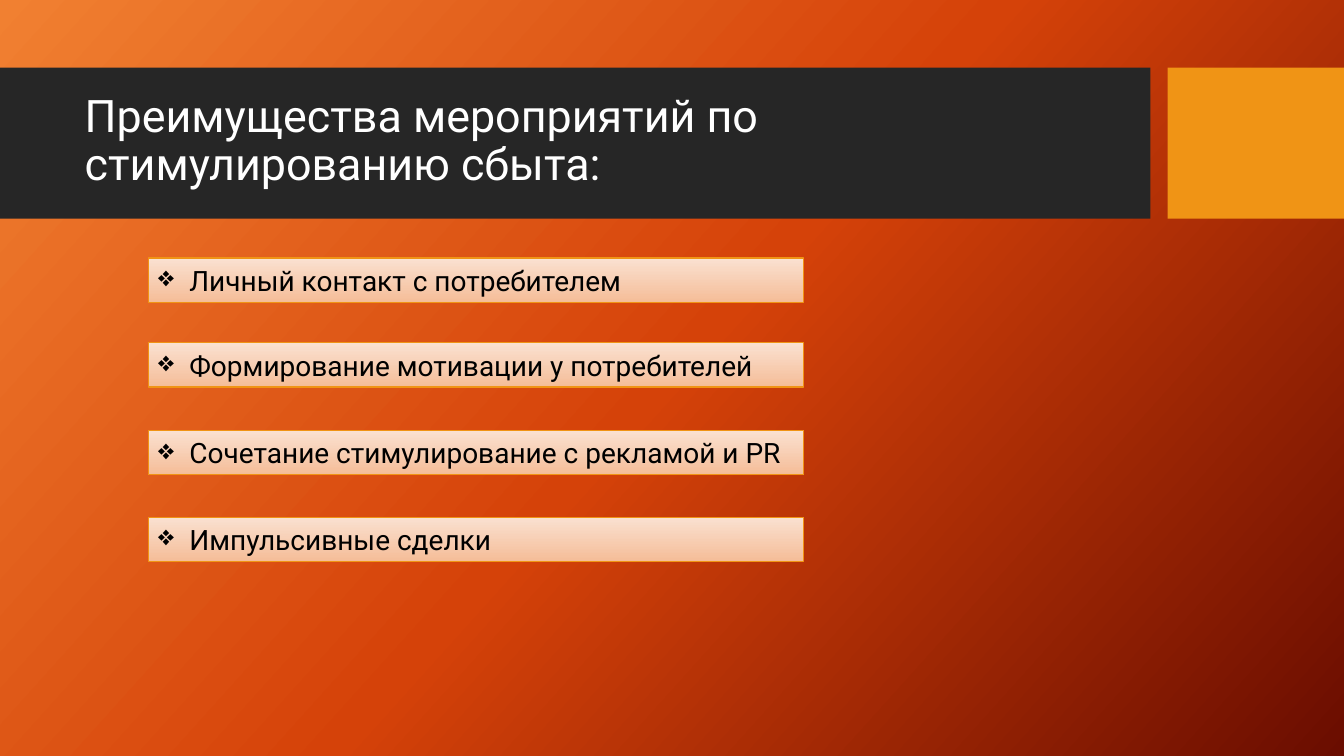
from lxml import etree
from pptx import Presentation
from pptx.dml.color import RGBColor
from pptx.enum.shapes import MSO_SHAPE
from pptx.enum.text import MSO_ANCHOR, MSO_AUTO_SIZE, PP_ALIGN
from pptx.oxml.ns import qn
from pptx.util import Pt

PX = 9144  # 100 px to the inch
RECTANGLE = MSO_SHAPE.RECTANGLE
MIDDLE = MSO_ANCHOR.MIDDLE
LEFT = PP_ALIGN.LEFT
NO_FIT, GROW = MSO_AUTO_SIZE.NONE, MSO_AUTO_SIZE.SHAPE_TO_FIT_TEXT

FONT = "Roboto"
COLORS = {
    "band": "262626", "accent": "F09415", "title": "FFFFFF", "text": "000000",
    "glow": "F18031", "flame": "D54209", "ember": "6A0D00",
    "cream": "FAE1D1", "peach": "F5BD98",
}
TITLE = "Преимущества мероприятий по стимулированию сбыта:"
BENEFITS = [  # top in px, wording
    (256, "Личный контакт с потребителем"),
    (340, "Формирование мотивации у потребителей"),
    (427, "Сочетание стимулирование с рекламой и PR"),
    (513, "Импульсивные сделки"),
]


def rgb(name):
    return RGBColor.from_string(COLORS[name])


def paint_gradient(fill, element, names, angle):
    """Spread the named colours evenly; the angle runs clockwise."""
    fill.gradient()
    fill.gradient_angle = 360 - angle
    stops = next(element.iter(qn("a:gsLst")))
    for stop in list(stops):
        stops.remove(stop)
    for index, name in enumerate(names):
        position = 100000 * index // (len(names) - 1)
        stop = etree.SubElement(stops, qn("a:gs"), pos=str(position))
        etree.SubElement(stop, qn("a:srgbClr"), val=COLORS[name])


def add_rectangle(page, left, top, width, height):
    box = page.shapes.add_shape(
        RECTANGLE, left * PX, top * PX, width * PX, height * PX)
    box.shadow.inherit = False
    return box


def format_text(para, size, color):
    para.alignment = LEFT
    for span in para.runs:
        span.font.name = FONT
        span.font.size = Pt(size)
        span.font.color.rgb = rgb(color)


def add_header(page, left, top, width, height):
    # Dark band and accent block, parted by a gap
    band_width, gap = 1141, 17
    block_left = band_width + gap
    for x, part_width, color in ((0, band_width, "band"),
                                 (block_left, width - block_left, "accent")):
        part = add_rectangle(page, left + x, top, part_width, height)
        part.fill.solid()
        part.fill.fore_color.rgb = rgb(color)
        part.line.fill.background()

    # Title, brought in front of the band
    title = page.shapes.title
    page.shapes.element.append(title.element)
    title.left, title.top = (left + 74) * PX, (top + 15) * PX
    title.width, title.height = 1051 * PX, 118 * PX
    frame = title.text_frame
    frame.text = TITLE
    frame.word_wrap = True
    frame.auto_size = NO_FIT
    frame.vertical_anchor = MIDDLE
    para = frame.paragraphs[0]
    para.line_spacing = 0.9
    format_text(para, 32, "title")


def add_benefit(page, left, top, width, height, wording):
    box = add_rectangle(page, left, top, width, height)
    paint_gradient(box.fill, box.element, ("cream", "peach"), 90)
    box.line.color.rgb = rgb("accent")
    box.line.width = Pt(0.75)
    frame = box.text_frame
    frame.text = wording
    frame.word_wrap = True
    frame.auto_size = GROW
    frame.vertical_anchor = MIDDLE

    # Hanging bullet
    para = frame.paragraphs[0]
    properties = para._p.get_or_add_pPr()
    properties.set("marL", str(31 * PX))
    properties.set("indent", str(-31 * PX))
    etree.SubElement(properties, qn("a:buChar"), char="❖")
    format_text(para, 20, "text")


def main():
    deck = Presentation()
    deck.slide_width, deck.slide_height = 1333 * PX, 750 * PX
    page = deck.slides.add_slide(deck.slide_layouts[5])
    paint_gradient(page.background.fill, page.element,
                   ("glow", "flame", "ember"), 42)
    add_header(page, 0, 67, 1333, 150)
    for top, wording in BENEFITS:
        add_benefit(page, 147, top, 650, 44, wording)
    deck.save("out.pptx")


if __name__ == "__main__":
    main()
